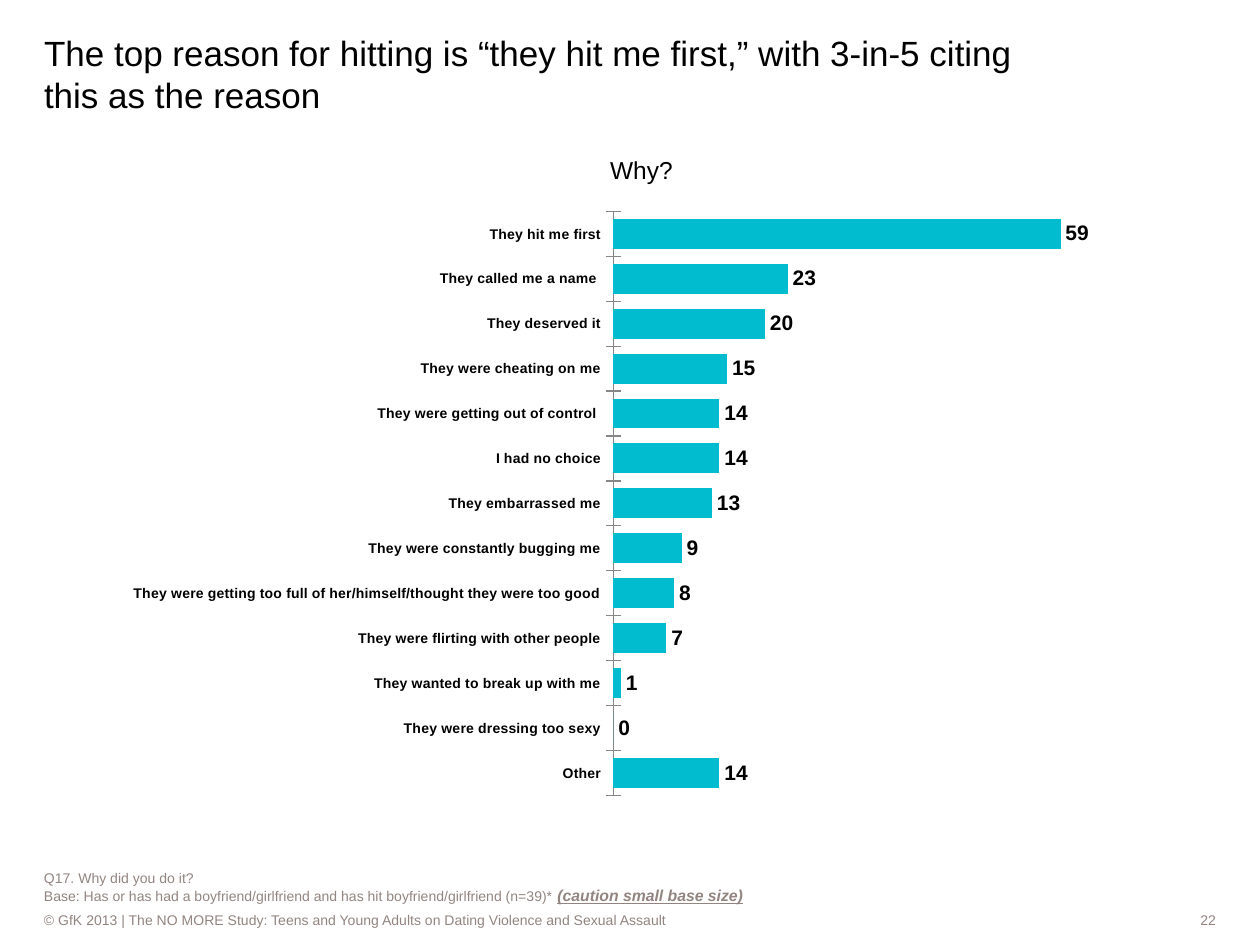
import pptx
import pptx.chart.data
import pptx.dml.color
import pptx.enum.chart
import pptx.enum.shapes
import pptx.enum.text
import pptx.oxml
import pptx.util

SCALE = 914400 / 126
GREY = "928580"
REASONS = {
    "They hit me first": 59,
    "They called me a name ": 23,
    "They deserved it": 20,
    "They were cheating on me": 15,
    "They were getting out of control ": 14,
    "I had no choice": 14,
    "They embarrassed me": 13,
    "They were constantly bugging me": 9,
    "They were getting too full of her/himself/thought they were too good": 8,
    "They were flirting with other people": 7,
    "They wanted to break up with me": 1,
    "They were dressing too sexy": 0,
    "Other": 14,
}
LAYOUT = (
    '<c:layout xmlns:c="http://schemas.openxmlformats.org/drawingml/2006/chart">'
    '<c:manualLayout><c:layoutTarget val="inner"/>'
    '<c:xMode val="edge"/><c:yMode val="edge"/>'
    '<c:x val="0.5"/><c:y val="0.05"/><c:w val="0.5"/><c:h val="0.9"/>'
    "</c:manualLayout></c:layout>"
)


def px(size):
    """Turn pixels into EMU."""
    return pptx.util.Emu(round(size * SCALE))


def color(code):
    """Turn a hex string into a colour."""
    return pptx.dml.color.RGBColor.from_string(code)


def style(item, values):
    """Set each attribute of an item from a dict."""
    for name, value in values.items():
        setattr(item, name, value)


def font(item, size, code, **extra):
    """Format a font."""
    style(item, {"name": "Arial", "size": pptx.util.Pt(size), **extra})
    item.color.rgb = color(code)


def place(shape, box):
    """Move and size a shape."""
    style(shape, dict(zip(("left", "top", "width", "height"), map(px, box))))


def write(shape, lines, code, anchor, align="LEFT", foot=0):
    """Fill a shape with lines, each a list of text, size and extra format."""
    frame = shape.text_frame
    style(frame, {
        "margin_left": 0, "margin_top": 0, "margin_right": 0,
        "margin_bottom": px(foot), "word_wrap": True,
        "auto_size": pptx.enum.text.MSO_AUTO_SIZE.NONE,
        "vertical_anchor": getattr(pptx.enum.text.MSO_ANCHOR, anchor),
    })
    for num, line in enumerate(lines):
        para = frame.add_paragraph() if num else frame.paragraphs[0]
        para.alignment = getattr(pptx.enum.text.PP_ALIGN, align)
        for text, size, extra in line:
            run = para.add_run()
            run.text = text
            font(run.font, size, code, **extra)


def label(slide, box, lines, code, anchor, align="LEFT", foot=0):
    """Add a text box."""
    shape = slide.shapes.add_textbox(*map(px, box))
    write(shape, lines, code, anchor, align, foot)


def strip(slide, box, text, align):
    """Add a white footer strip."""
    kind = pptx.enum.shapes.MSO_SHAPE.RECTANGLE
    shape = slide.shapes.add_shape(kind, *map(px, box))
    shape.shadow.inherit = False
    shape.fill.solid()
    shape.fill.fore_color.rgb = color("FFFFFF")
    shape.line.fill.background()
    write(shape, [[(text, 8, {})]], GREY, "MIDDLE", align)


def title(slide, box, text):
    """Place and fill the title."""
    shape = slide.shapes.title
    place(shape, box)
    write(shape, [[(text, 20, {})]], "000000", "BOTTOM")
    shape.text_frame.paragraphs[0].line_spacing = pptx.util.Pt(24)


def bars(slide, box, values):
    """Add the bar chart."""
    enum = pptx.enum.chart
    data = pptx.chart.data.CategoryChartData(number_format="0")
    data.categories = list(values)
    data.add_series("Series 1", list(values.values()))
    kind = enum.XL_CHART_TYPE.BAR_CLUSTERED
    chart = slide.shapes.add_chart(kind, *map(px, box), data).chart
    style(chart, {"has_legend": False, "has_title": False})
    font(chart.font, 18, "000000")
    axis = chart.category_axis
    style(axis, {
        "reverse_order": True, "has_major_gridlines": False,
        "major_tick_mark": enum.XL_TICK_MARK.CROSS,
        "minor_tick_mark": enum.XL_TICK_MARK.NONE,
    })
    font(axis.tick_labels.font, 8, "000000", bold=True)
    axis.format.line.color.rgb = color("868686")
    style(chart.value_axis, {
        "visible": False, "has_major_gridlines": False,
        "minimum_scale": 0, "maximum_scale": 70,
    })
    plot = chart.plots[0]
    style(plot, {"gap_width": 50, "vary_by_categories": False,
                 "has_data_labels": True})
    style(plot.data_labels, {
        "show_value": True, "number_format": "0",
        "number_format_is_linked": False,
        "position": enum.XL_LABEL_POSITION.OUTSIDE_END,
    })
    font(plot.data_labels.font, 12, "000000", bold=True)
    fill = plot.series[0].format.fill
    fill.solid()
    fill.fore_color.rgb = color("00BCCE")
    area = chart.element.chart.plotArea
    for old in area.xpath("c:layout"):
        area.remove(old)
    area.insert(0, pptx.oxml.parse_xml(LAYOUT))


def main():
    """Build the slide."""
    deck = pptx.Presentation()
    style(deck, {"slide_width": px(1260), "slide_height": px(945)})
    slide = deck.slides.add_slide(deck.slide_layouts[5])
    title(slide, (44, 32, 995, 84),
          "The top reason for hitting is “they hit me first,” "
          "with 3-in-5 citing this as the reason")
    strip(slide, (44, 910, 973, 20),
          "© GfK 2013 | The NO MORE Study: Teens and Young Adults "
          "on Dating Violence and Sexual Assault", "LEFT")
    strip(slide, (1037, 910, 179, 20), "22", "RIGHT")
    note = [
        [("Q17. Why did you do it?", 8, {})],
        [("Base: Has or has had a boyfriend/girlfriend and has hit "
          "boyfriend/girlfriend (n=39)* ", 8, {}),
         ("(caution small base size)", 9,
          {"bold": True, "italic": True, "underline": True})],
    ]
    label(slide, (44, 890, 1171, 20), note, GREY, "BOTTOM", foot=5)
    label(slide, (535, 148, 213, 44), [[("Why?", 14, {})]],
          "000000", "MIDDLE", "CENTER")
    bars(slide, (83, 179, 1061, 649), REASONS)
    deck.save("out.pptx")


if __name__ == "__main__":
    main()
